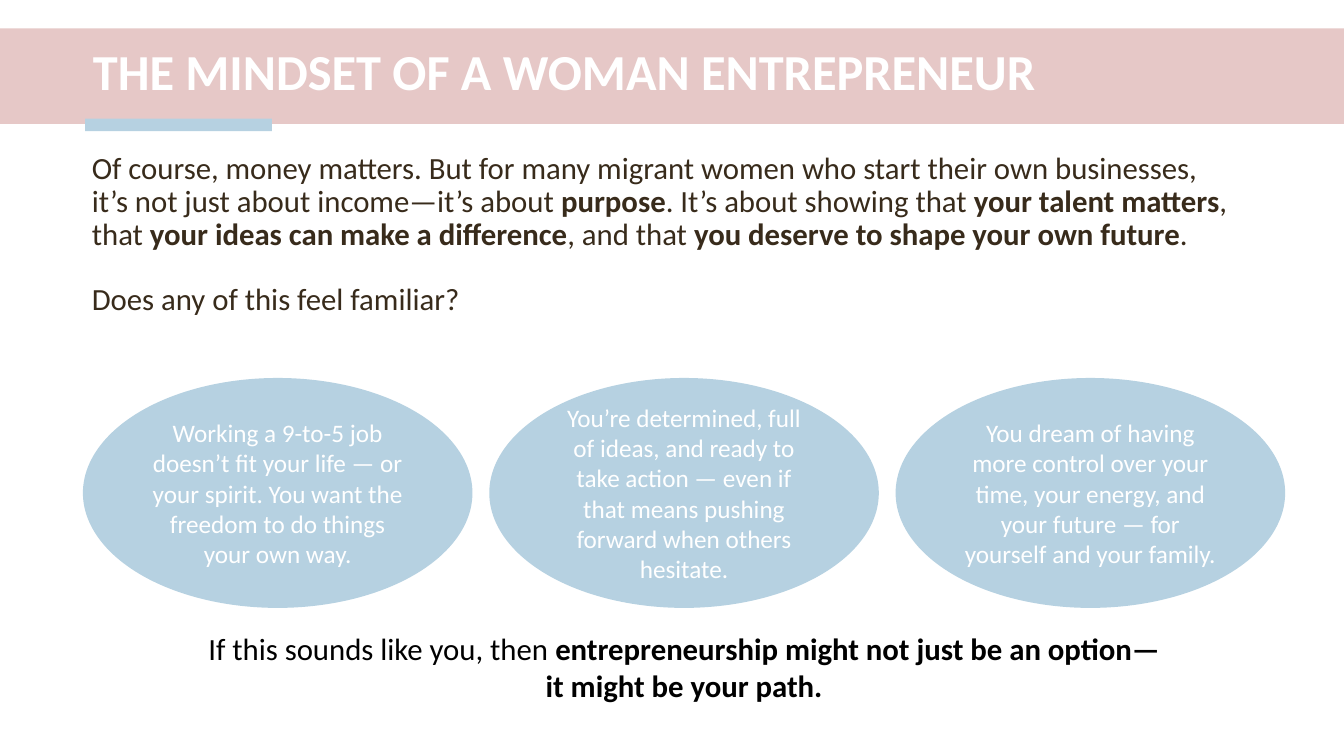
from pptx import Presentation
from pptx.dml.color import RGBColor
from pptx.enum.shapes import MSO_SHAPE as Shape
from pptx.enum.text import MSO_ANCHOR as Anchor, PP_ALIGN as Align
from pptx.util import Emu, Pt

PX = 9525  # EMU per px, 96 px to the inch
COLORS = {"rose": "E6C8C7", "sky": "B6D1E1", "brown": "382B1B",
          "white": "FFFFFF", "black": "000000"}


def color(name):
    return RGBColor.from_string(COLORS[name])


def write(para, text, *, font="Calibri", size=18, ink="white", bold=False,
          align=Align.LEFT, spacing=None, before=None):
    """Fill a paragraph; parts between ** marks switch boldness."""
    para.alignment = align
    if spacing is not None:
        para.line_spacing = spacing
    if before is not None:
        para.space_before = before
    for index, part in enumerate(text.split("**")):
        if part:
            span = para.add_run()
            span.text = part
            span.font.name = font
            span.font.size = Pt(size)
            span.font.bold = bold != (index % 2 == 1)
            span.font.color.rgb = color(ink)


class SlideBuilder:
    def __init__(self, deck):
        self.page = deck.slides.add_slide(deck.slide_layouts[6])

    def shape(self, kind, left, top, width, height, fill):
        item = self.page.shapes.add_shape(
            kind, *(Emu(n * PX) for n in (left, top, width, height)))
        item.shadow.inherit = False
        item.fill.solid()
        item.fill.fore_color.rgb = color(fill)
        item.line.fill.background()
        return item

    def ellipse(self, left, top, width, height, text):
        frame = self.shape(Shape.OVAL, left, top, width, height, "sky").text_frame
        frame.word_wrap = True
        frame.vertical_anchor = Anchor.MIDDLE
        write(frame.paragraphs[0], text, align=Align.CENTER)

    def text(self, left, top, width, height, paragraphs, *, anchor=Anchor.TOP,
             gap=None, **style):
        box = self.page.shapes.add_textbox(
            *(Emu(n * PX) for n in (left, top, width, height)))
        frame = box.text_frame
        frame.word_wrap = True
        frame.vertical_anchor = anchor
        for index, text in enumerate(paragraphs):
            para = frame.add_paragraph() if index else frame.paragraphs[0]
            write(para, text, before=gap if index else None, **style)


def main():
    deck = Presentation()
    deck.slide_width, deck.slide_height = Emu(1280 * PX), Emu(720 * PX)
    slide = SlideBuilder(deck)

    # Title band with accent bar
    slide.shape(Shape.RECTANGLE, 0, 27, 1280, 91, "rose")
    slide.shape(Shape.RECTANGLE, 81, 113, 178, 12, "sky")
    slide.text(79, 33, 1145, 76, ["THE MINDSET OF A WOMAN ENTREPRENEUR"],
               anchor=Anchor.MIDDLE, size=36, bold=True, spacing=0.9)

    # Introduction and question, one line apart
    line = Pt(23.4)
    slide.text(78, 141, 1110, 205, [
        "Of course, money matters. But for many migrant women who start their own "
        "businesses, it’s not just about income—it’s about **purpose**. It’s about "
        "showing that **your talent matters**, that **your ideas can make a "
        "difference**, and that **you deserve to shape your own future**.",
        "Does any of this feel familiar?",
    ], size=22, ink="brown", spacing=line, gap=line)

    # Row of mindset ellipses
    mindsets = [
        "Working a 9-to-5 job doesn’t fit your life — or your spirit. "
        "You want the freedom to do things your own way.",
        "You’re determined, full of ideas, and ready to take action — even if "
        "that means pushing forward when others hesitate.",
        "You dream of having more control over your time, your energy, and "
        "your future — for yourself and your family.",
    ]
    width, gutter = 371, 16
    for column, mindset in enumerate(mindsets):
        slide.ellipse(79 + column * (width + gutter), 360, width, 219, mindset)

    # Closing statement
    slide.text(188, 595, 927, 81, [
        "If this sounds like you, then **entrepreneurship might not just be an "
        "option—it might be your path.**",
    ], size=22, ink="black", align=Align.CENTER)

    deck.save("out.pptx")


if __name__ == "__main__":
    main()
